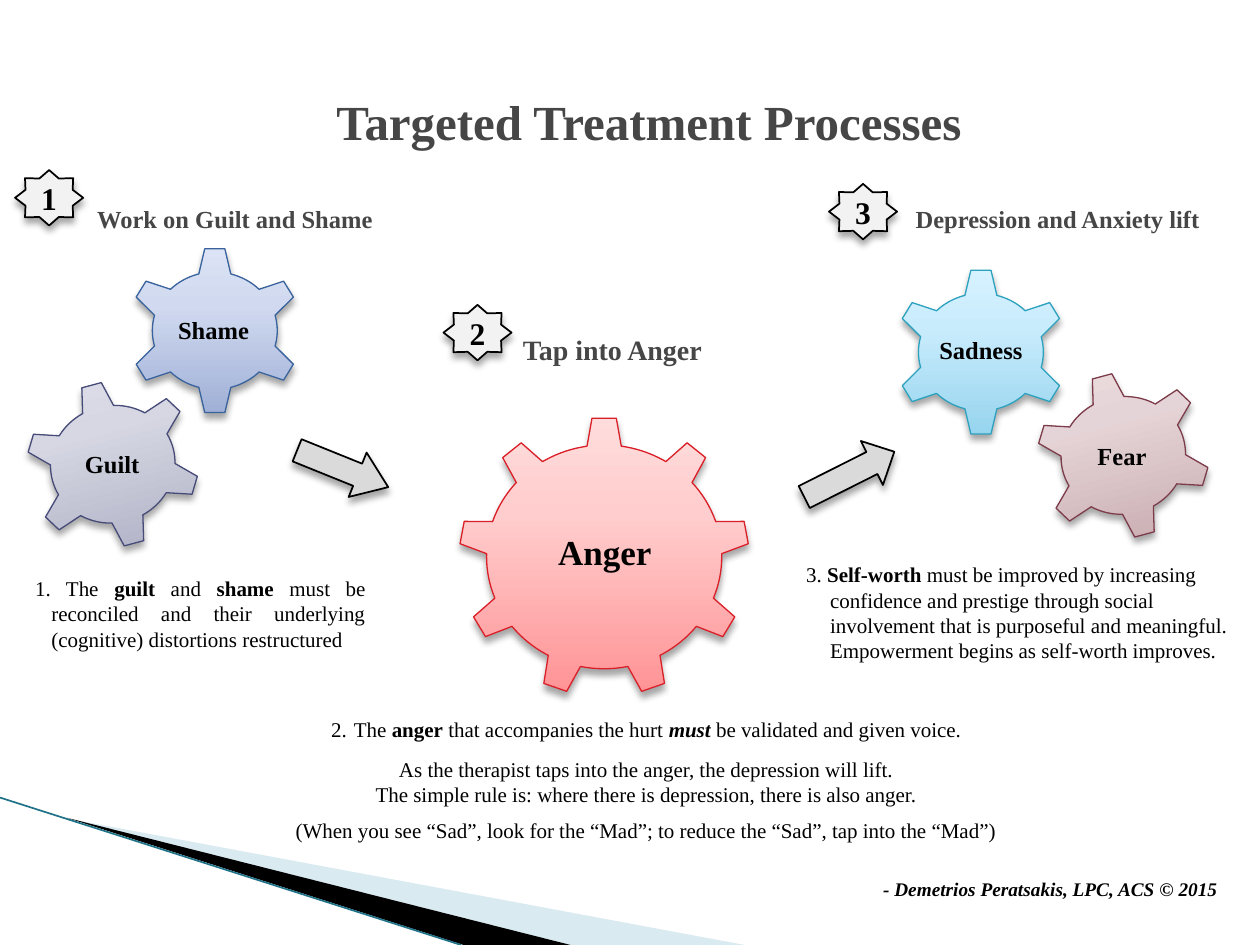
from copy import deepcopy

from lxml import etree
from pptx import Presentation
from pptx.dml.color import RGBColor
from pptx.enum.shapes import MSO_CONNECTOR, MSO_SHAPE as SHAPE
from pptx.enum.text import MSO_ANCHOR as ANCHOR, PP_ALIGN as ALIGN
from pptx.oxml import parse_xml
from pptx.oxml.ns import nsdecls, qn
from pptx.util import Inches, Pt

rgb = RGBColor.from_string
FONT = "Times New Roman"
GRAY, BLACK = "464646", "000000"
SHADOW = (
    f'<a:effectLst {nsdecls("a")}><a:outerShdw blurRad="50800" dist="38100" dir="5400000" '
    'rotWithShape="0"><a:srgbClr val="000000"><a:alpha val="35000"/></a:srgbClr>'
    "</a:outerShdw></a:effectLst>"
)


def write(p, runs, size, color=BLACK, align=ALIGN.CENTER):
    """Fill a paragraph with (text, style) runs; style holds b and i for bold and italic."""
    p.alignment = align
    for text, style in runs:
        r = p.add_run()
        r.text = text
        r.font.name, r.font.size = FONT, Pt(size)
        r.font.bold, r.font.italic = "b" in style, "i" in style
        r.font.color.rgb = rgb(color)


def outline_with_shadow(sp, color, width):
    sp.line.color.rgb = rgb(color)
    sp.line.width = Pt(width)
    sp._element.spPr.append(parse_xml(SHADOW))


prs = Presentation()
prs.slide_width, prs.slide_height = Inches(10), Inches(7.5)
slide = prs.slides.add_slide(prs.slide_layouts[5])
shapes = slide.shapes

# Corner decoration
for points, color, alpha in [
    ([(0.55, 6.5), (5.91, 7.5), (4.53, 7.5)], "A0CBDC", 40),
    ([(0.53, 6.49), (4.53, 7.5), (3.68, 7.5)], BLACK, 100),
]:
    corners = [(Inches(x), Inches(y)) for x, y in points]
    builder = shapes.build_freeform(*corners[0])
    builder.add_line_segments(corners[1:])
    sp = builder.convert_to_shape()
    sp.shadow.inherit = False
    sp.fill.solid()
    sp.fill.fore_color.rgb = rgb(color)
    sp.line.fill.background()
    clr = sp._element.spPr.find(".//" + qn("a:srgbClr"))
    etree.SubElement(clr, qn("a:alpha"), val=str(alpha * 1000))

edge = shapes.add_connector(
    MSO_CONNECTOR.STRAIGHT, Inches(0), Inches(6.33), Inches(3.66), Inches(7.5)
)
edge.line.color.rgb = rgb("1F7288")
edge.line.width = Pt(0.95)
etree.SubElement(edge._element.spPr, qn("a:effectLst"))

# Title
title = shapes.title
title.left, title.top, title.width, title.height = map(Inches, (1.29, 0.43, 7.72, 1.06))
title.text_frame.vertical_anchor = ANCHOR.MIDDLE
write(title.text_frame.paragraphs[0], [("Targeted Treatment Processes", "b")], 28, GRAY)

# Gears: label, kind, box, rotation, gradient from bottom to top, outline, label box, size
small, large = (1.39, 1.33), (2.31, 2.22)
gears = [
    ("Sadness", SHAPE.GEAR_6, (7.09, 2.13, *small), 0, ("96D4EE", "C9ECFC", "D7F2FF"),
     "2DA2BF", (7.44, 2.46, 0.69, 0.66), 14),
    ("Fear", SHAPE.GEAR_6, (8.22, 2.95, *small), 345, ("C4A5A9", "E5D4D7", "EEE0E2"),
     "7D3C4A", (8.39, 3.22, 1.03, 0.83), 14),
    ("Anger", SHAPE.GEAR_9, (3.64, 3.31, *large), 0, ("FF9294", "FFCDCD", "FFDCDC"),
     "DA1F28", (4.11, 3.83, 1.38, 1.14), 20),
    ("Guilt", SHAPE.GEAR_6, (0.2, 3.02, *small), 345, ("A8AAC0", "D6D7E3", "E2E2EC"),
     "474B78", (0.5, 3.32, 0.78, 0.75), 14),
    ("Shame", SHAPE.GEAR_6, (1.01, 1.96, *small), 0, ("9FAFD6", "D0D9EF", "DCE3F6"),
     "39639D", (1.35, 2.3, 0.69, 0.66), 14),
]
for label, kind, box, rotation, colors, line, label_box, size in gears:
    sp = shapes.add_shape(kind, *map(Inches, box))
    sp.rotation = rotation
    sp.fill.gradient()
    sp.fill.gradient_angle = 90
    stop_list = sp._element.spPr.find(".//" + qn("a:gsLst"))
    stop_list.append(deepcopy(stop_list[-1]))
    for stop, position, color in zip(sp.fill.gradient_stops, (0, 0.65, 1), colors):
        stop.position = position
        stop.color.rgb = rgb(color)
    outline_with_shadow(sp, line, 0.75)

    tf = shapes.add_textbox(*map(Inches, label_box)).text_frame
    tf.margin_left = tf.margin_right = tf.margin_top = tf.margin_bottom = Inches(0.01)
    tf.vertical_anchor = ANCHOR.MIDDLE
    tf.word_wrap = True
    tf.paragraphs[0].line_spacing = 0.9
    write(tf.paragraphs[0], [(label, "b")], size)

# Step numbers
for number, (left, top) in enumerate([(0.12, 1.35), (3.52, 2.42), (6.58, 1.46)], 1):
    sp = shapes.add_shape(
        SHAPE.STAR_8_POINT, Inches(left), Inches(top), Inches(0.54), Inches(0.44)
    )
    sp.fill.solid()
    sp.fill.fore_color.rgb = rgb("F2F2F2")
    outline_with_shadow(sp, BLACK, 1)
    tf = sp.text_frame
    tf.margin_left = tf.margin_right = tf.margin_top = tf.margin_bottom = 0
    tf.vertical_anchor = ANCHOR.MIDDLE
    tf.word_wrap = False
    write(tf.paragraphs[0], [(str(number), "b")], 18)

# Arrows between the steps
for box, rotation, head in [
    ((6.34, 3.57, 0.8, 0.39), 153.3, 0.51),
    ((2.33, 3.53, 0.78, 0.38), 202, 0.69),
]:
    sp = shapes.add_shape(SHAPE.LEFT_ARROW, *map(Inches, box))
    sp.rotation = rotation
    sp.adjustments[0], sp.adjustments[1] = 0.5, head
    sp.fill.solid()
    sp.fill.fore_color.rgb = rgb("DADADA")
    outline_with_shadow(sp, BLACK, 1)

# Texts: box, size, colour, alignment, paragraphs of
# (left margin, first-line indent, space before, space after, runs)
texts = [
    ((6.63, 1.57, 3.53, 0.34), 14, GRAY, ALIGN.CENTER,
     [(0, 0, 0, 0, [("Depression and Anxiety lift", "b")])]),
    ((0.39, 1.57, 2.95, 0.34), 14, GRAY, ALIGN.CENTER,
     [(0, 0, 0, 0, [("Work on Guilt and Shame", "b")])]),
    ((3.83, 2.59, 2.06, 0.37), 16, GRAY, ALIGN.CENTER,
     [(0, 0, 0, 0, [("Tap into Anger", "b")])]),
    ((6.91, 6.91, 2.95, 0.29), 11, BLACK, ALIGN.LEFT,
     [(0, 0, 0, 0, [("- Demetrios Peratsakis, LPC, ACS © 2015", "bi")])]),
    ((0.05, 4.52, 2.95, 0.71), 12, BLACK, ALIGN.JUSTIFY,
     [(0.26, -0.13, 0, 0, [
         ("1. The ", ""), ("guilt", "b"), (" and ", ""), ("shame", "b"),
         (" must be reconciled and their underlying (cognitive) distortions restructured", ""),
     ])]),
    ((2.19, 5.64, 5.88, 1.11), 12, BLACK, ALIGN.CENTER, [
        (0.18, -0.18, 0, 6, [
            ("The ", ""), ("anger", "b"), (" that accompanies the hurt ", ""), ("must", "bi"),
            (" be validated and given voice.", ""),
        ]),
        (0, 0, 2.2, 0, [("As the therapist taps into the anger, the depression will lift.", "")]),
        (0, 0, 0, 4,
         [("The simple rule is: where there is depression, there is also anger.", "")]),
        (0, 0, 2.2, 0,
         [("(When you see “Sad”, look for the “Mad”; to reduce the “Sad”, "
           "tap into the “Mad”)", "")]),
    ]),
    ((6.3, 4.41, 3.65, 0.91), 12, BLACK, ALIGN.LEFT, [
        (0.38, -0.38, 0, 0,
         [("3. ", ""), ("Self-worth", "b"), (" must be improved by increasing", "")]),
        (0.38, -0.19, 0, 0, [("confidence and prestige through social", "")]),
        (0.38, -0.19, 0, 0, [("involvement that is purposeful and meaningful.", "")]),
        (0.38, -0.19, 0, 0, [("Empowerment begins as self-worth improves.", "")]),
    ]),
]
for box, size, color, align, paragraphs in texts:
    tf = shapes.add_textbox(*map(Inches, box)).text_frame
    tf.word_wrap = True
    for i, (margin, indent, before, after, runs) in enumerate(paragraphs):
        p = tf.add_paragraph() if i else tf.paragraphs[0]
        p.space_before, p.space_after = Pt(before), Pt(after)
        pPr = p._p.get_or_add_pPr()
        pPr.set("marL", str(Inches(margin)))
        pPr.set("indent", str(Inches(indent)))
        if runs[0][0] == "The ":
            etree.SubElement(pPr, qn("a:buFont"), typeface=FONT)
            etree.SubElement(pPr, qn("a:buAutoNum"), type="arabicPeriod", startAt="2")
        write(p, runs, size, color, align)

prs.save("out.pptx")
